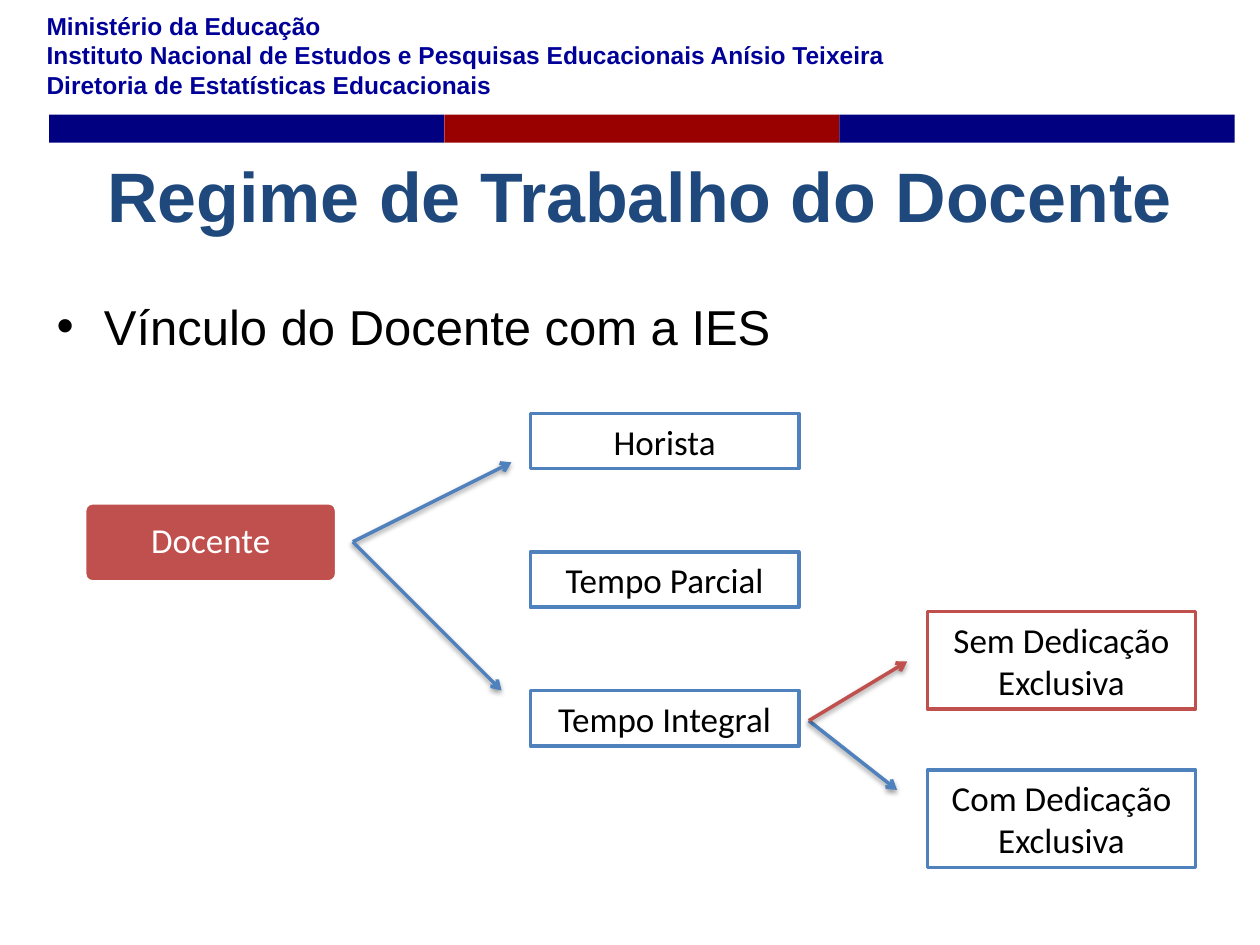
"""Builds a slide on the work regimes of teaching staff."""
from lxml.etree import SubElement
from pptx import Presentation
from pptx.dml.color import RGBColor
from pptx.enum.shapes import MSO_CONNECTOR, MSO_SHAPE
from pptx.enum.text import MSO_ANCHOR, PP_ALIGN
from pptx.oxml import parse_xml
from pptx.oxml.ns import nsdecls, qn
from pptx.util import Pt

NAVY, CRIMSON, BLUE, RED = "000080", "990000", "4F81BD", "C0504D"
WHITE, BLACK = "FFFFFF", "000000"

HEADER = [
    "Ministério da Educação",
    "Instituto Nacional de Estudos e Pesquisas Educacionais Anísio Teixeira",
    "Diretoria de Estatísticas Educacionais",
]
STRIPES = [NAVY, CRIMSON, NAVY]
TITLE = "Regime de Trabalho do Docente"
TOPIC = "Vínculo do Docente com a IES"
ROOT = "Docente"
REGIMES = ["Horista", "Tempo Parcial", "Tempo Integral"]
DEDICATIONS = [("Sem Dedicação Exclusiva", RED), ("Com Dedicação Exclusiva", BLUE)]
ARROWS = [
    ((201.6, 309.6), (292.3, 264.2), BLUE),
    ((201.6, 309.6), (286.6, 394.6), BLUE),
    ((462.2, 411.8), (512.6, 451.4), BLUE),
    ((462.2, 411.8), (518.4, 378), RED),
]
SHADOW = (
    f'<a:effectLst {nsdecls("a")}><a:outerShdw blurRad="{Pt(3.1)}" dist="{Pt(1.6)}" '
    'dir="5400000" rotWithShape="0"><a:srgbClr val="000000"><a:alpha val="38000"/>'
    "</a:srgbClr></a:outerShdw></a:effectLst>"
)


def rgb(color):
    return RGBColor.from_string(color)


def write(paragraph, text, size, color, font="Calibri", bold=False, align=None):
    run = paragraph.add_run()
    run.text = text
    run.font.size, run.font.name, run.font.bold = Pt(size), font, bold
    run.font.color.rgb = rgb(color)
    paragraph.alignment = align


def place(part, left, top, width, height):
    part.left, part.top, part.width, part.height = map(Pt, (left, top, width, height))


def add_block(slide, kind, bounds, fill, outline=None):
    block = slide.shapes.add_shape(kind, *map(Pt, bounds))
    block.shadow.inherit = False
    block.fill.solid()
    block.fill.fore_color.rgb = rgb(fill)
    if outline:
        block.line.color.rgb = rgb(outline)
        block.line.width = Pt(2)
    else:
        block.line.fill.background()
    return block


def add_box(slide, text, bounds, outline):
    box = add_block(slide, MSO_SHAPE.RECTANGLE, bounds, WHITE, outline)
    write(box.text_frame.paragraphs[0], text, 20, BLACK, align=PP_ALIGN.CENTER)


def add_arrow(slide, start, end, color):
    arrow = slide.shapes.add_connector(MSO_CONNECTOR.STRAIGHT, *map(Pt, start + end))
    arrow.line.color.rgb = rgb(color)
    arrow.line.width = Pt(2)
    SubElement(arrow.line._get_or_add_ln(), qn("a:tailEnd"), type="arrow")
    arrow._element.spPr.append(parse_xml(SHADOW))


def add_header(slide):
    for column, color in enumerate(STRIPES):
        add_block(slide, MSO_SHAPE.RECTANGLE, (28.1 + column * 225.8, 65.6, 225.8, 16), color)
    header = slide.shapes.add_textbox(*map(Pt, (19.5, 2.2, 694.8, 58.3))).text_frame
    header.word_wrap = True
    header.vertical_anchor = MSO_ANCHOR.MIDDLE
    for index, line in enumerate(HEADER):
        paragraph = header.add_paragraph() if index else header.paragraphs[0]
        write(paragraph, line, 14, "000099", "Arial", True)


def add_headings(slide):
    title, body = slide.placeholders
    place(title, 31, 71.3, 668.9, 79.2)
    title.text_frame.vertical_anchor = MSO_ANCHOR.MIDDLE
    write(title.text_frame.paragraphs[0], TITLE, 40, "1F497D", "Arial", True, PP_ALIGN.CENTER)
    place(body, 25.2, 165.6, 648, 348.5)
    write(body.text_frame.paragraphs[0], TOPIC, 28, BLACK, "Arial")


def add_diagram(slide):
    root = add_block(slide, MSO_SHAPE.ROUNDED_RECTANGLE, (48.4, 287.3, 144, 45.2), RED, WHITE)
    root.adjustments[0] = 0.1
    paragraph = root.text_frame.paragraphs[0]
    paragraph.line_spacing = 0.9
    write(paragraph, ROOT, 20, WHITE, align=PP_ALIGN.CENTER)
    for row, regime in enumerate(REGIMES):
        add_box(slide, regime, (303.1, 236.2 + row * 79.2, 153.4, 31.6), BLUE)
    for row, (dedication, color) in enumerate(DEDICATIONS):
        add_box(slide, dedication, (529.9, 349.4 + row * 90.7, 153.4, 55.7), color)
    for start, end, color in ARROWS:
        add_arrow(slide, start, end, color)


def main():
    deck = Presentation()
    deck.slide_width, deck.slide_height = Pt(720), Pt(540)
    slide = deck.slides.add_slide(deck.slide_layouts[1])
    add_header(slide)
    add_headings(slide)
    add_diagram(slide)
    deck.save("out.pptx")


if __name__ == "__main__":
    main()
